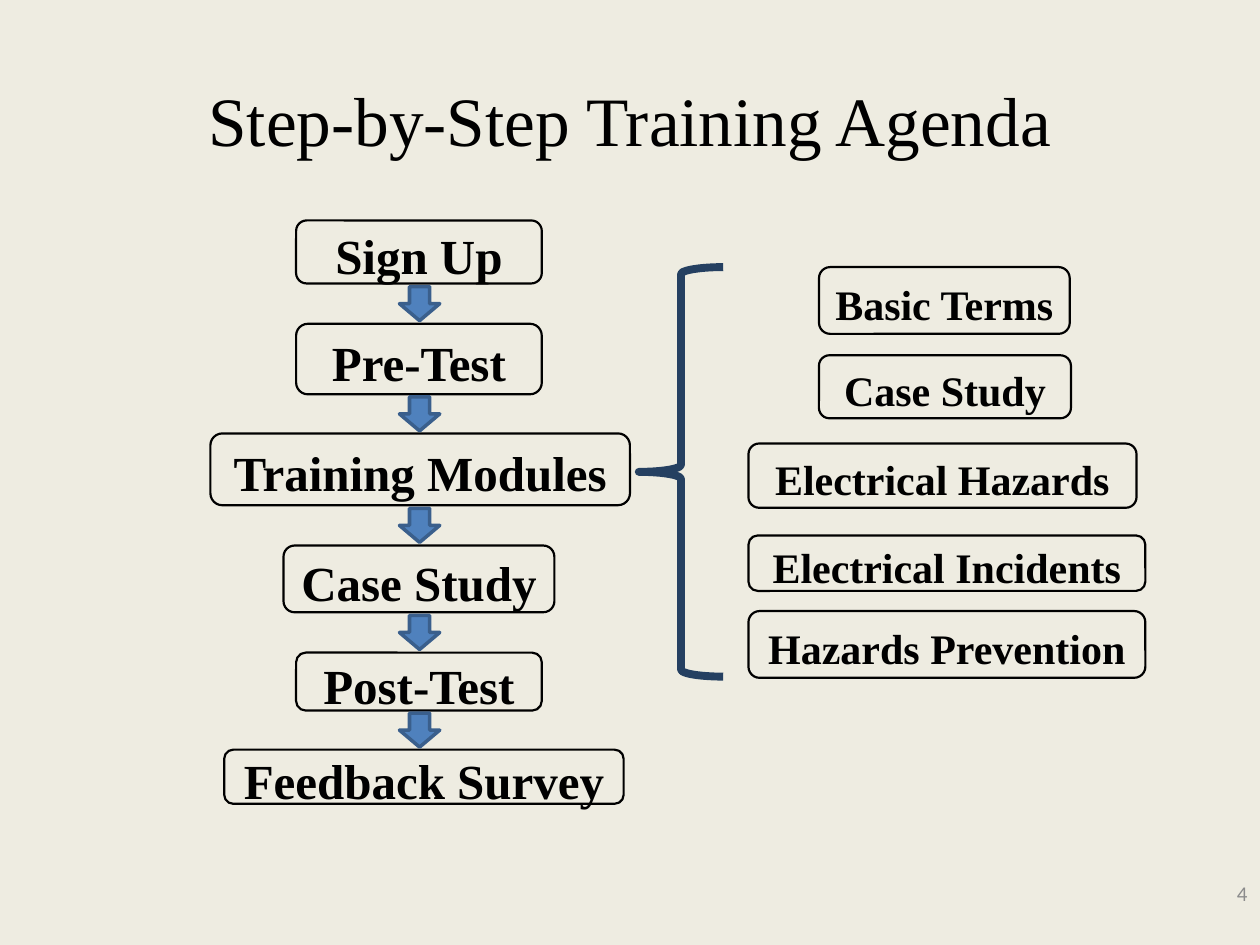
import pptx
import pptx.dml.color
import pptx.enum.shapes
import pptx.enum.text
import pptx.util

SHAPES = pptx.enum.shapes.MSO_SHAPE
ALIGN = pptx.enum.text.PP_ALIGN
SERIF = "Times New Roman"
ARROW_LEFT, ARROW_WIDTH, ARROW_HEIGHT = 3.17, 0.32, 0.27

# label, left, top, width, height in inches
STEPS = [
    ("Sign Up", 2.35, 1.75, 1.95, 0.5),
    ("Pre-Test", 2.35, 2.57, 1.95, 0.56),
    ("Training Modules", 1.67, 3.44, 3.33, 0.57),
    ("Case Study", 2.25, 4.33, 2.15, 0.53),
    ("Post-Test", 2.35, 5.18, 1.95, 0.46),
    ("Feedback Survey", 1.78, 5.95, 3.17, 0.43),
]
MODULES = [
    ("Basic Terms", 6.5, 2.12, 1.99, 0.53),
    ("Case Study", 6.5, 2.82, 2, 0.5),
    ("Electrical Hazards", 5.94, 3.52, 3.08, 0.51),
    ("Electrical Incidents", 5.94, 4.25, 3.15, 0.44),
    ("Hazards Prevention", 5.94, 4.85, 3.15, 0.53),
]


def inches(*lengths):
    return [pptx.util.Inches(length) for length in lengths]


def color(value):
    return pptx.dml.color.RGBColor.from_string(value)


def write(shape, text, size, font=SERIF, text_color="000000", bold=False, align=ALIGN.CENTER):
    frame = shape.text_frame
    frame.word_wrap = True
    frame.vertical_anchor = pptx.enum.text.MSO_ANCHOR.MIDDLE
    paragraph = frame.paragraphs[0]
    paragraph.alignment = align
    run = paragraph.add_run()
    run.text = text
    run.font.name = font
    run.font.size = pptx.util.Pt(size)
    run.font.bold = bold
    run.font.color.rgb = color(text_color)


def add_shape(slide, kind, box, line_color, line_width, fill=None):
    shape = slide.shapes.add_shape(kind, *inches(*box))
    shape.shadow.inherit = False
    if fill:
        shape.fill.solid()
        shape.fill.fore_color.rgb = color(fill)
    else:
        shape.fill.background()
    shape.line.color.rgb = color(line_color)
    shape.line.width = pptx.util.Pt(line_width)
    return shape


def add_label(slide, text, box, size):
    shape = add_shape(slide, SHAPES.ROUNDED_RECTANGLE, box, "000000", 1.25)
    frame = shape.text_frame
    frame.margin_left = frame.margin_right = frame.margin_bottom = 0
    write(shape, text, size, bold=True)


def add_arrow_between(slide, upper, lower):
    """Centre a down arrow in the gap between two steps."""
    gap_middle = (upper[2] + upper[4] + lower[2]) / 2
    box = (ARROW_LEFT, gap_middle - ARROW_HEIGHT / 2, ARROW_WIDTH, ARROW_HEIGHT)
    add_shape(slide, SHAPES.DOWN_ARROW, box, "3A5F8C", 2, "4F81BD")


def add_title(slide, text):
    title = slide.shapes.title
    title.left, title.top, title.width, title.height = inches(0.5, 0.63, 9, 0.62)
    title.text_frame.auto_size = pptx.enum.text.MSO_AUTO_SIZE.NONE
    write(title, text, 39.6)


def main():
    presentation = pptx.Presentation()
    presentation.slide_width, presentation.slide_height = inches(10, 7.5)
    slide = presentation.slides.add_slide(presentation.slide_layouts[5])
    slide.background.fill.solid()
    slide.background.fill.fore_color.rgb = color("EEECE1")

    add_title(slide, "Step-by-Step Training Agenda")
    for labels, size in ((STEPS, 28), (MODULES, 24)):
        for text, *box in labels:
            add_label(slide, text, box, size)
    for upper, lower in zip(STEPS, STEPS[1:]):
        add_arrow_between(slide, upper, lower)
    add_shape(slide, SHAPES.LEFT_BRACE, (5.07, 2.12, 0.67, 3.25), "254061", 4.5)

    page_number = slide.shapes.add_textbox(*inches(7.75, 6.89, 2.25, 0.4))
    write(page_number, "4", 12, "Calibri", "8C8C8C", align=ALIGN.RIGHT)
    presentation.save("out.pptx")


if __name__ == "__main__":
    main()
